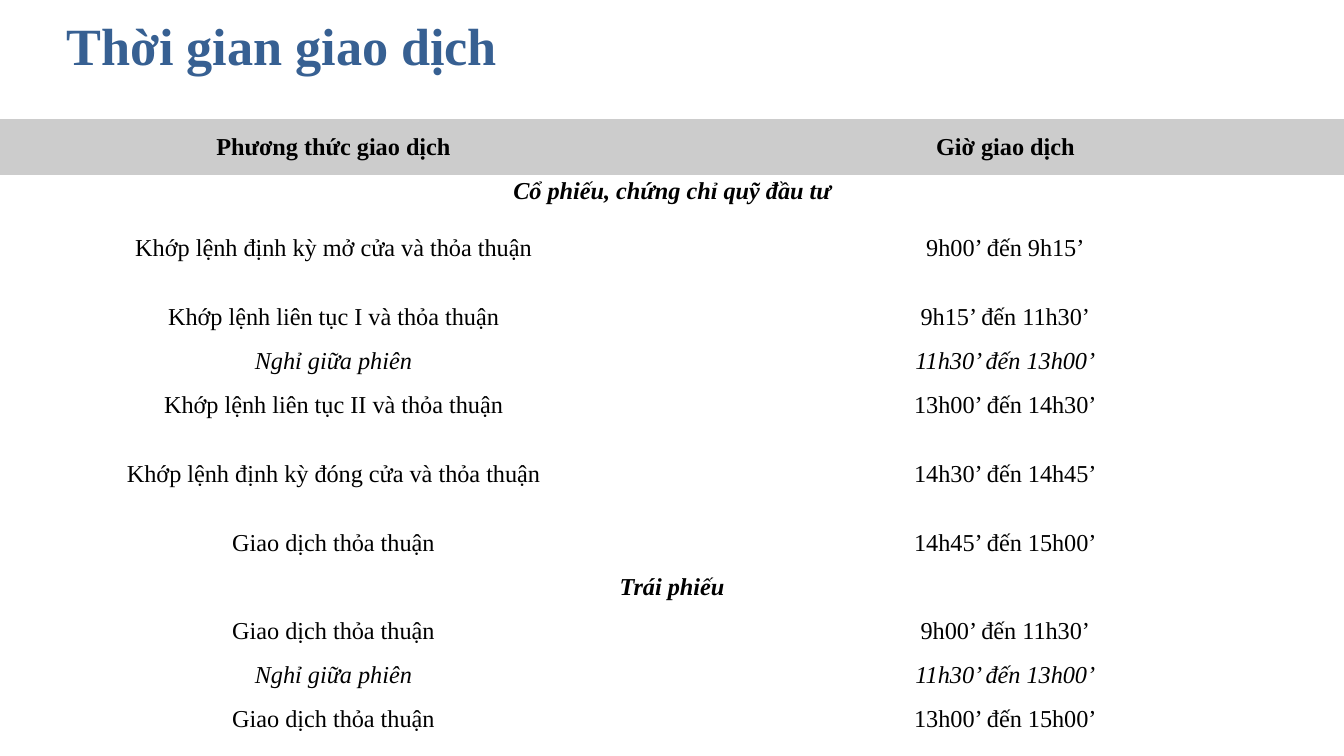
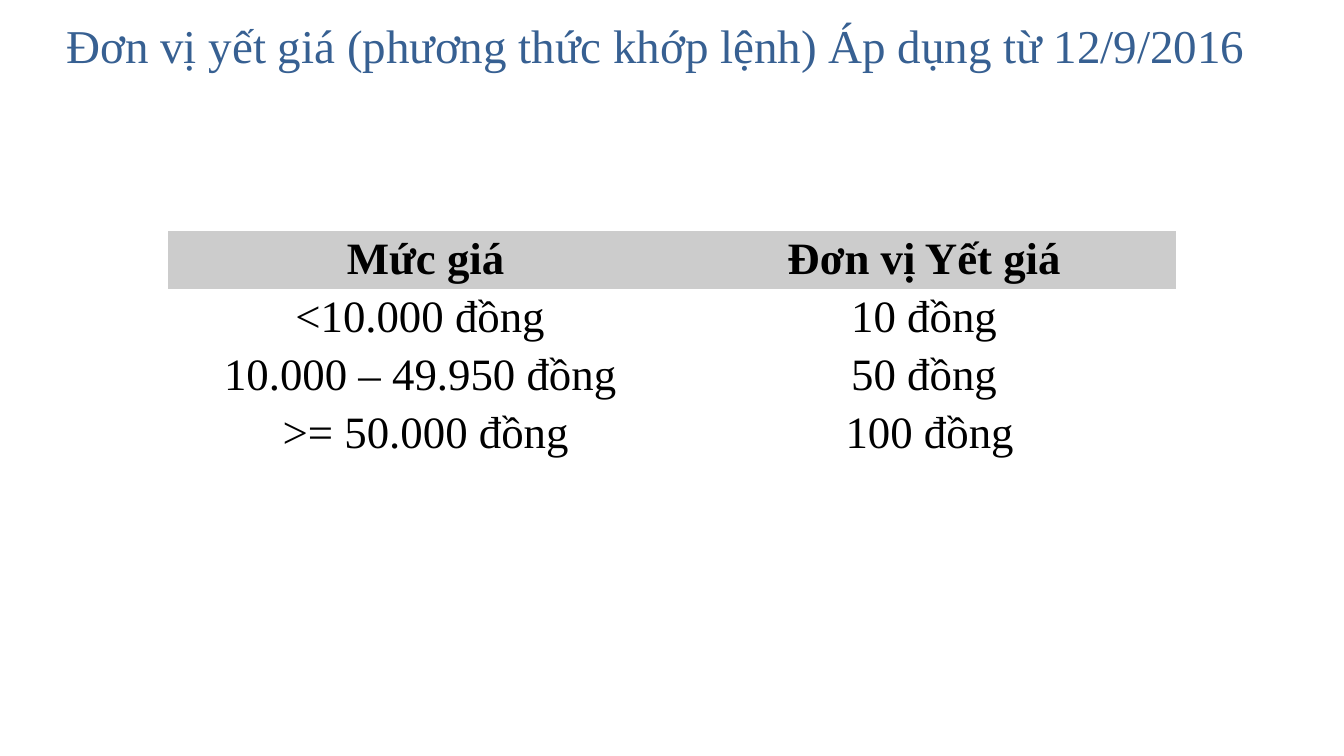
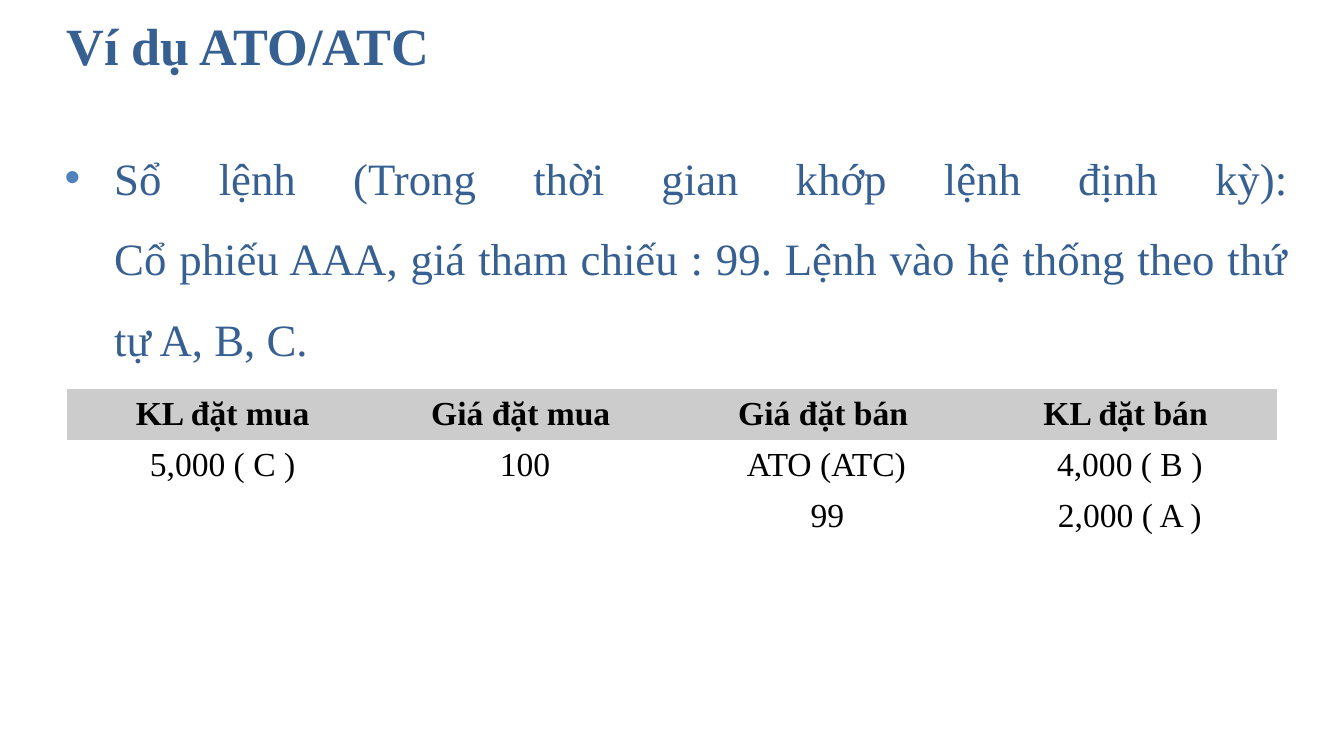
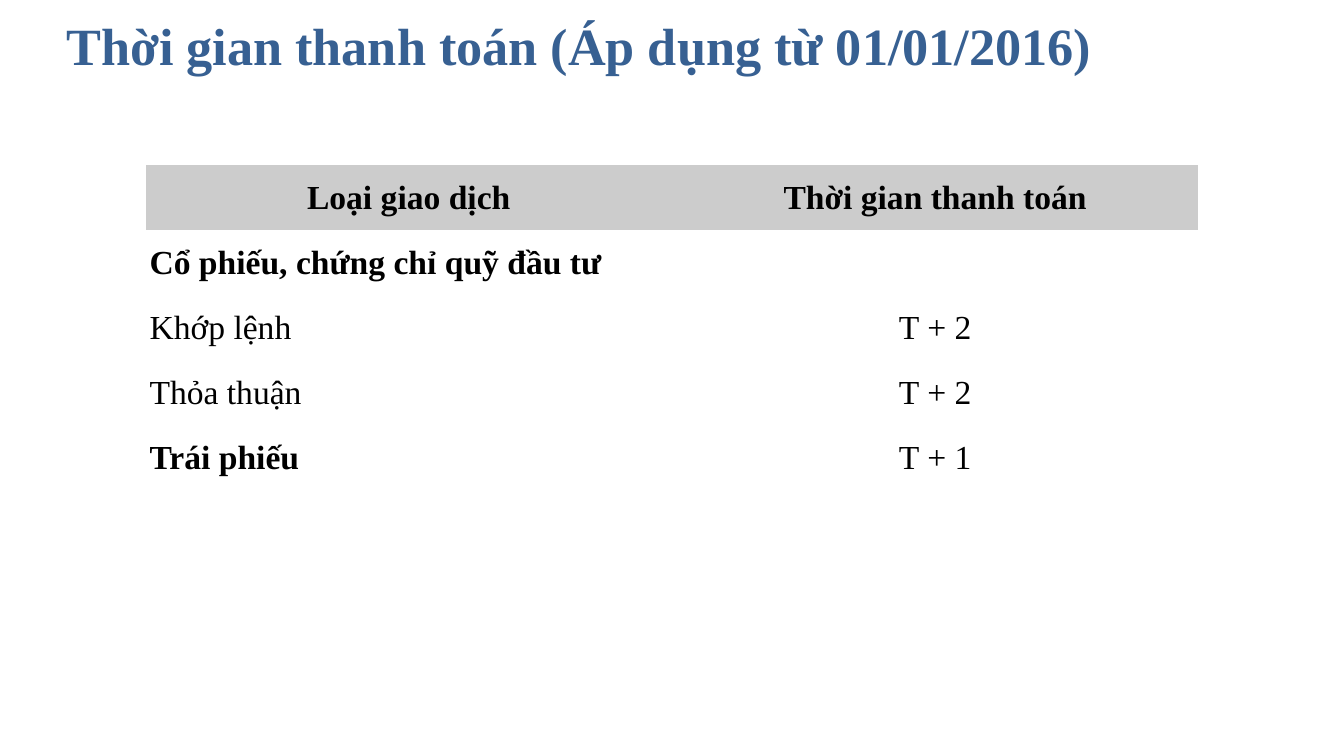
from lxml import etree
from pptx import Presentation
from pptx.dml.color import RGBColor
from pptx.enum.text import MSO_ANCHOR, MSO_AUTO_SIZE, PP_ALIGN
from pptx.oxml.ns import qn
from pptx.util import Inches, Pt

LEFT, CENTER, JUSTIFY = PP_ALIGN.LEFT, PP_ALIGN.CENTER, PP_ALIGN.JUSTIFY
MIDDLE = MSO_ANCHOR.MIDDLE
NO_FIT = MSO_AUTO_SIZE.NONE

W, H = Inches(10), Inches(5.625)
FONT = "Times New Roman"
NAVY = RGBColor(0x37, 0x60, 0x92)
BULLET_BLUE = RGBColor(0x4F, 0x81, 0xBD)
BLACK = RGBColor(0, 0, 0)
GREY = RGBColor(0xCC, 0xCC, 0xCC)
WHITE = RGBColor(0xFF, 0xFF, 0xFF)
PLAIN_TABLE = "{2D5ABB26-0587-4C30-8999-92F81FD0307C}"
CONTENT, TITLE_ONLY = 1, 5
SHORT, MEDIUM, TALL = 4.23, 7.41, 10.87


def across(percent):
    return round(W * percent / 100)


def down(percent):
    return round(H * percent / 100)


def place(sp, left, top, width, height):
    sp.left, sp.top = across(left), down(top)
    sp.width, sp.height = across(width), down(height)


def format_runs(p, size, color, bold=False, italic=False):
    for r in p.runs:
        r.font.name = FONT
        r.font.size = Pt(size)
        r.font.color.rgb = color
        r.font.bold = bold
        r.font.italic = italic


def add_slide(prs, title, size=28, bold=True, layout=TITLE_ONLY):
    s = prs.slides.add_slide(prs.slide_layouts[layout])
    sp = s.shapes.title
    place(sp, 3.94, 0.36, 94, 11)
    tf = sp.text_frame
    tf.text = title
    tf.word_wrap = True
    tf.auto_size = NO_FIT
    tf.vertical_anchor = MIDDLE
    p = tf.paragraphs[0]
    p.alignment = LEFT
    format_runs(p, size, NAVY, bold)
    return s


def add_bullet(p, indent):
    pPr = p._p.get_or_add_pPr()
    pPr.set("marL", str(indent))
    pPr.set("indent", str(-indent))
    color = etree.SubElement(pPr, qn("a:buClr"))
    etree.SubElement(color, qn("a:srgbClr")).set("val", str(BULLET_BLUE))
    etree.SubElement(pPr, qn("a:buFont")).set("typeface", "Arial")
    etree.SubElement(pPr, qn("a:buChar")).set("char", "•")


def fill_body(s, text):
    sp = s.placeholders[1]
    place(sp, 3.8, 15.47, 93, 77.2)
    tf = sp.text_frame
    tf.word_wrap = True
    tf.auto_size = NO_FIT
    p = tf.paragraphs[0]
    p.text = text
    add_bullet(p, Inches(0.37))
    p.alignment = JUSTIFY
    p.line_spacing = 1.5
    p.space_before = Pt(0)
    format_runs(p, 24, NAVY)


def set_cell(cell, text, size, align, fill, inset, style):
    cell.vertical_anchor = MIDDLE
    if fill is None:
        cell.fill.background()
    else:
        cell.fill.solid()
        cell.fill.fore_color.rgb = fill
    if inset is not None:
        cell.margin_left = cell.margin_right = Inches(inset)
        cell.margin_top = cell.margin_bottom = Inches(inset)
    p = cell.text_frame.paragraphs[0]
    p.alignment = align
    if text:
        p.text = text
        format_runs(p, size, BLACK, "b" in style, "i" in style)
    else:
        etree.SubElement(p._p, qn("a:endParaRPr")).set("sz", "1200")


def add_grid(s, left, top, widths, heights, rows, size, inset=None,
             fill=WHITE, first_align=CENTER):
    frame = s.shapes.add_table(len(rows), len(widths), across(left), down(top),
                               across(sum(widths)), down(sum(heights)))
    table = frame.table
    table.first_row = table.horz_banding = False
    table._tbl.tblPr.find(qn("a:tableStyleId")).text = PLAIN_TABLE
    for column, width in zip(table.columns, widths):
        column.width = across(width)
    for i, (style, *texts) in enumerate(rows):
        table.rows[i].height = down(heights[i])
        if len(texts) < len(widths):
            table.cell(i, 0).merge(table.cell(i, len(widths) - 1))
        for j, text in enumerate(texts):
            align = first_align if i and j == 0 else CENTER
            set_cell(table.cell(i, j), text, size, align,
                     fill if i else GREY, inset, style)
    return table


def trading_hours(prs):
    s = add_slide(prs, "Thời gian giao dịch")
    rows = [
        ("b", "Phương thức giao dịch", "Giờ giao dịch"),
        ("bi", "Cổ phiếu, chứng chỉ quỹ đầu tư"),
        ("", "Khớp lệnh định kỳ mở cửa và thỏa thuận", "9h00’ đến 9h15’"),
        ("", "Khớp lệnh liên tục I và thỏa thuận", "9h15’ đến 11h30’"),
        ("i", "Nghỉ giữa phiên", "11h30’ đến 13h00’"),
        ("", "Khớp lệnh liên tục II và thỏa thuận", "13h00’ đến 14h30’"),
        ("", "Khớp lệnh định kỳ đóng cửa và thỏa thuận", "14h30’ đến 14h45’"),
        ("", "Giao dịch thỏa thuận", "14h45’ đến 15h00’"),
        ("bi", "Trái phiếu"),
        ("", "Giao dịch thỏa thuận", "9h00’ đến 11h30’"),
        ("i", "Nghỉ giữa phiên", "11h30’ đến 13h00’"),
        ("", "Giao dịch thỏa thuận", "13h00’ đến 15h00’"),
    ]
    heights = [MEDIUM, SHORT, TALL, MEDIUM, SHORT, MEDIUM,
               TALL, MEDIUM, SHORT, MEDIUM, SHORT, MEDIUM]
    add_grid(s, 0, 15.75, [49.6, 50.4], heights, rows, 13, 0.02)


def quotation_units(prs):
    s = add_slide(prs, "Đơn vị yết giá (phương thức khớp lệnh) Áp dụng từ 12/9/2016",
                  25.2, False)
    rows = [
        ("b", " Mức giá", "Đơn vị Yết giá"),
        ("", "<10.000 đồng", "10 đồng"),
        ("", "10.000 – 49.950 đồng", "50 đồng"),
        ("", " >= 50.000 đồng", " 100 đồng"),
    ]
    add_grid(s, 12.5, 30.5, [37.5] * 2, [7.67] * 4, rows, 24, 0.03)


def order_book(prs):
    s = add_slide(prs, "Ví dụ ATO/ATC", layout=CONTENT)
    fill_body(s, "Sổ lệnh (Trong thời gian khớp lệnh định kỳ):\v"
                 "Cổ phiếu AAA, giá tham chiếu : 99. "
                 "Lệnh vào hệ thống theo thứ tự A, B, C.")
    rows = [
        ("b", " KL đặt mua", "Giá đặt mua", "Giá đặt bán", "KL đặt bán"),
        ("", " 5,000 ( C )", " 100", " ATO (ATC)", " 4,000 ( B )"),
        ("", "", "", " 99", " 2,000 ( A )"),
    ]
    add_grid(s, 5, 51.45, [22.5] * 4, [6.7] * 3, rows, 18, fill=None)


def settlement_times(prs):
    s = add_slide(prs, "Thời gian thanh toán (Áp dụng từ 01/01/2016)")
    rows = [
        ("b", "Loại giao dịch", "Thời gian thanh toán"),
        ("b", "Cổ phiếu, chứng chỉ quỹ đầu tư"),
        ("", "Khớp lệnh", "T + 2"),
        ("", "Thỏa thuận", "T + 2"),
        ("b", "Trái phiếu", "T + 1"),
    ]
    table = add_grid(s, 10.83, 21.85, [39.17] * 2, [8.6] * 5, rows, 18, 0.03,
                     first_align=LEFT)
    format_runs(table.cell(4, 1).text_frame.paragraphs[0], 18, BLACK)


def main():
    prs = Presentation()
    prs.slide_width, prs.slide_height = W, H
    trading_hours(prs)
    quotation_units(prs)
    order_book(prs)
    settlement_times(prs)
    prs.save("out.pptx")


if __name__ == "__main__":
    main()
